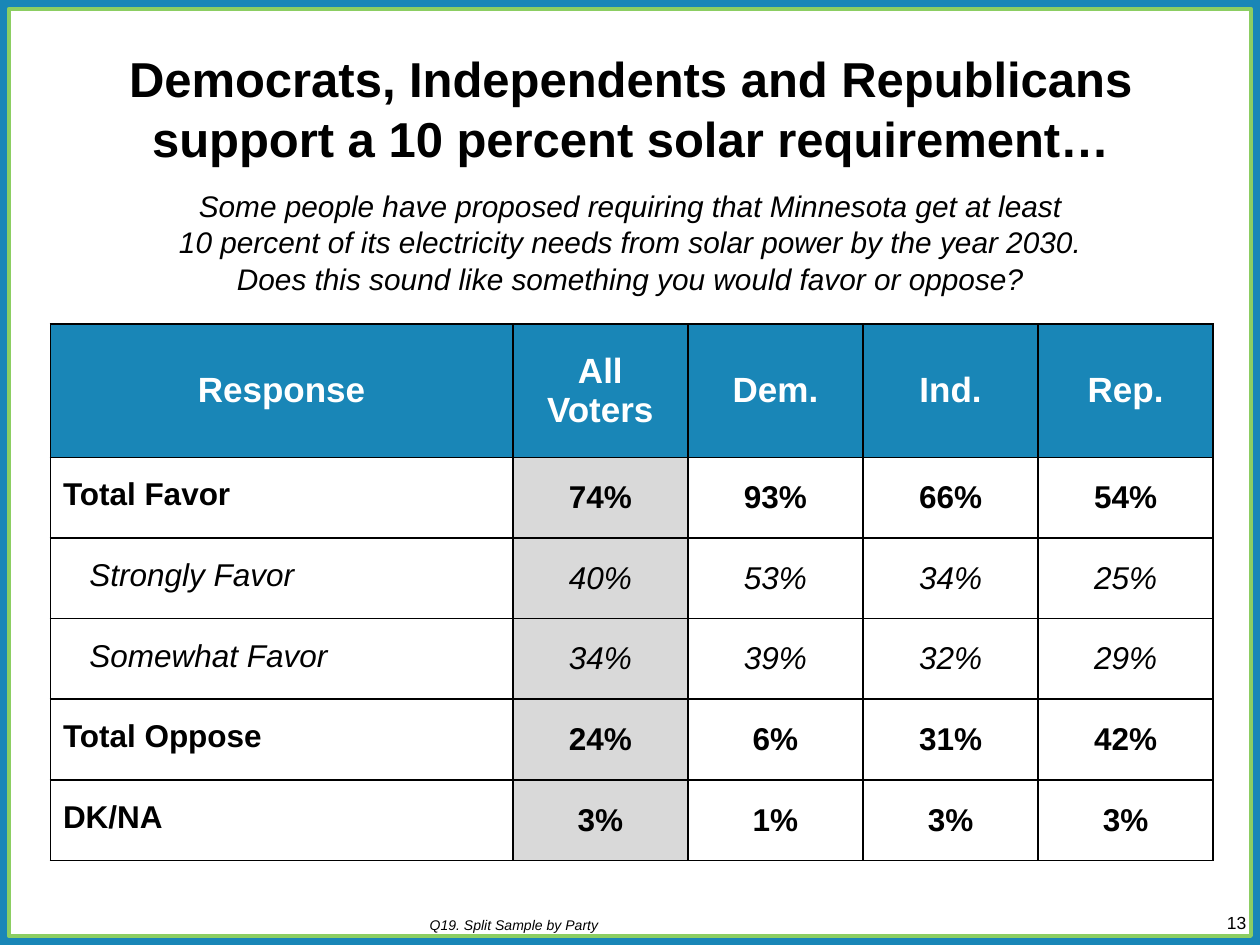
"""Build the polling slide on support for a 10 percent solar requirement."""
from lxml import etree
from pptx import Presentation
from pptx.dml.color import RGBColor
from pptx.enum.shapes import MSO_SHAPE
from pptx.enum.text import MSO_ANCHOR, MSO_AUTO_SIZE, PP_ALIGN
from pptx.oxml.ns import qn
from pptx.util import Inches, Pt

LEFT, CENTER, RIGHT = PP_ALIGN.LEFT, PP_ALIGN.CENTER, PP_ALIGN.RIGHT
TOP, MIDDLE, BOTTOM = MSO_ANCHOR.TOP, MSO_ANCHOR.MIDDLE, MSO_ANCHOR.BOTTOM
RECTANGLE = MSO_SHAPE.RECTANGLE
NO_AUTOFIT = MSO_AUTO_SIZE.NONE
BLUE = RGBColor(0x19, 0x86, 0xB7)
GREEN = RGBColor(0x8C, 0xCE, 0x62)
GRAY = RGBColor(0xD9, 0xD9, 0xD9)
WHITE = RGBColor(0xFF, 0xFF, 0xFF)
BLACK = RGBColor(0, 0, 0)


def write(tf, text, size, color=BLACK, align=LEFT, bold=False, italic=False, spacing=None):
    tf.word_wrap = True
    p = tf.paragraphs[0]
    p.text = text
    p.alignment = align
    p.space_before = Pt(0)
    p.line_spacing = spacing
    for r in p.runs:
        r.font.name = "Arial"
        r.font.size = Pt(size)
        r.font.color.rgb = color
        r.font.bold = bold
        r.font.italic = italic


def place(sp, left, top, width, height, anchor=TOP):
    sp.left, sp.top = Inches(left), Inches(top)
    sp.width, sp.height = Inches(width), Inches(height)
    sp.text_frame.auto_size = NO_AUTOFIT
    sp.text_frame.vertical_anchor = anchor


prs = Presentation()
prs.slide_width, prs.slide_height = Inches(10), Inches(7.5)
s = prs.slides.add_slide(prs.slide_layouts[1])
s.background.fill.solid()
s.background.fill.fore_color.rgb = BLUE

frame = s.shapes.add_shape(RECTANGLE, Inches(0.07), Inches(0.07), Inches(9.86), Inches(7.36))
frame.shadow.inherit = False
frame.fill.solid()
frame.fill.fore_color.rgb = WHITE
frame.line.color.rgb = GREEN
frame.line.width = Pt(2)
s.shapes._spTree.insert(2, frame._element)

title = s.shapes.title
place(title, 0.17, 0.3, 9.67, 1.25)
title.text_frame.margin_top = Inches(0.07)
write(title.text_frame, "Democrats, Independents and Republicans support a 10 percent solar requirement…",
      28, align=CENTER, bold=True, spacing=1.03)

footnote = s.placeholders[1]
place(footnote, 3.31, 6.97, 6.31, 0.49, BOTTOM)
pPr = footnote.text_frame.paragraphs[0]._p.get_or_add_pPr()
pPr.set("marL", "0")
pPr.set("indent", "0")
etree.SubElement(pPr, qn("a:buNone"))
write(footnote.text_frame, "Q19. Split Sample by Party", 8, italic=True)

question = s.shapes.add_textbox(0, 0, 0, 0)
place(question, 0.88, 1.43, 8.25, 0.96)
write(question.text_frame,
      "Some people have proposed requiring that Minnesota get at least\v"
      "10 percent of its electricity needs from solar power by the year 2030.\v"
      "Does this sound like something you would favor or oppose?",
      17, align=CENTER, italic=True, spacing=1.03)

number = s.shapes.add_textbox(0, 0, 0, 0)
place(number, 8.91, 7.19, 1.08, 0.27)
write(number.text_frame, "13", 10, align=RIGHT)

rows = [
    ("Response", "All Voters", "Dem.", "Ind.", "Rep."),
    ("Total Favor", "74%", "93%", "66%", "54%"),
    ("Strongly Favor", "40%", "53%", "34%", "25%"),
    ("Somewhat Favor", "34%", "39%", "32%", "29%"),
    ("Total Oppose", "24%", "6%", "31%", "42%"),
    ("DK/NA", "3%", "1%", "3%", "3%"),
]
DETAIL_ROWS = (2, 3)

table = s.shapes.add_table(len(rows), len(rows[0]), Inches(0.4), Inches(2.57),
                           Inches(9.24), Inches(4.25)).table
table.horz_banding = False
for i, column in enumerate(table.columns):
    column.width = Inches(1.39 if i else 3.67)
for i, row in enumerate(table.rows):
    row.height = Inches(0.64 if i else 1.06)

for i, values in enumerate(rows):
    for j, value in enumerate(values):
        cell = table.cell(i, j)
        header, label, detail = i == 0, i > 0 and j == 0, i in DETAIL_ROWS
        cell.vertical_anchor = MIDDLE
        cell.margin_left = Inches(0.31 if label and detail else 0.1)
        cell.margin_right = Inches(0.1)
        cell.margin_top = cell.margin_bottom = Inches(0.1 if label else 0.01)
        write(cell.text_frame, value, 20 if header else 18,
              color=WHITE if header else BLACK, align=LEFT if label else CENTER,
              bold=not detail, italic=detail, spacing=Pt(17) if label else None)
        tcPr = cell._tc.get_or_add_tcPr()
        for side in ("a:lnL", "a:lnR", "a:lnT", "a:lnB"):
            ln = etree.SubElement(tcPr, qn(side), w=str(Pt(1)))
            fill = etree.SubElement(ln, qn("a:solidFill"))
            etree.SubElement(fill, qn("a:srgbClr"), val=str(BLACK))
        if header or j == 1:
            cell.fill.solid()
            cell.fill.fore_color.rgb = BLUE if header else GRAY
        else:
            cell.fill.background()

prs.save("out.pptx")
